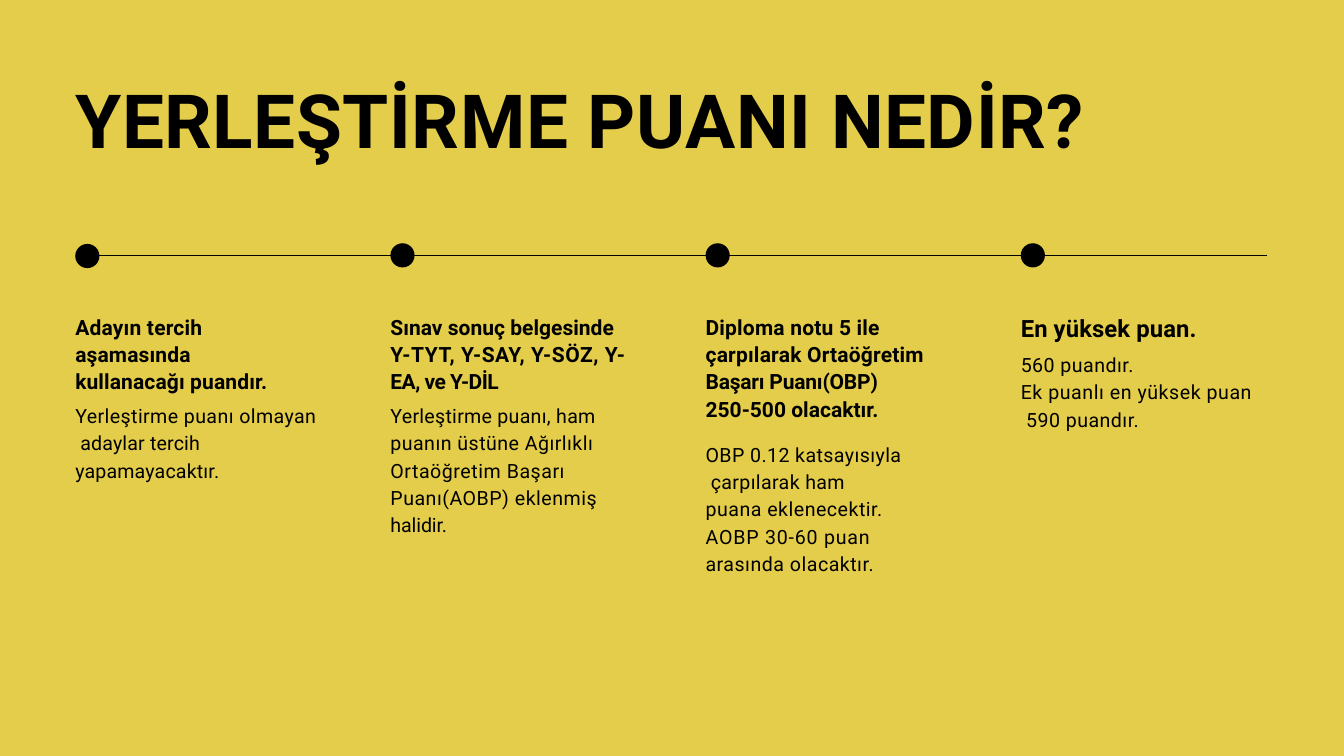
"""Build the slide on the placement score: a title and a four-step timeline."""
import math

import pptx
import pptx.dml.color
import pptx.enum.shapes
import pptx.util

Inches = pptx.util.Inches
Pt = pptx.util.Pt
COLORS = {"background": "E4CD4A", "ink": "000000"}
INK = pptx.dml.color.RGBColor.from_string(COLORS["ink"])
LEFT, PITCH, RADIUS, SIDES = 1.12, 4.69, 0.18, 24


def add_text(p, text, size=21, bold=False, spacing=0):
    r = p.add_run()
    r.text = text
    r.font.name = "Roboto"
    r.font.size = Pt(size)
    r.font.bold = bold
    r.font.color.rgb = INK
    r.font._element.set("spc", str(round(spacing * 100)))


def add_box(s, left, top, width, height):
    tf = s.shapes.add_textbox(Inches(left), Inches(top), Inches(width), Inches(height)).text_frame
    tf.word_wrap = True
    tf.margin_left = tf.margin_top = tf.margin_right = tf.margin_bottom = 0
    return tf


HEAD = {"size": 22.5, "bold": True}
BODY = {"size": 21, "bold": False}
BIG = {"size": 25.5, "bold": True}

# Each paragraph: format, line spacing, space before, lines with letter spacing
columns = [
    (4.65, 2.55, [
        (HEAD, 1.08, 0, [("Adayın tercih", 0.2), ("aşamasında", 0.1), ("kullanacağı puandır.", 0.1)]),
        (BODY, 1.16, 6.4, [("Yerleştirme puanı olmayan", 0.45), (" adaylar tercih", 0.2),
                           ("yapamayacaktır.", 0.2)]),
    ]),
    (4.65, 3.37, [
        (HEAD, 1.08, 0, [("Sınav sonuç belgesinde", 0), ("Y-TYT, Y-SAY, Y-SÖZ, Y-", 0.6),
                         ("EA, ve Y-DİL", -0.6)]),
        (BODY, 1.16, 6.4, [("Yerleştirme puanı, ham", 0.3), ("puanın üstüne Ağırlıklı", 0.5),
                           ("Ortaöğretim Başarı", 0.6), ("Puanı(AOBP) eklenmiş", 0.55),
                           ("halidir.", -0.1)]),
    ]),
    (4.65, 3.95, [
        (HEAD, 1.08, 0, [("Diploma notu 5 ile", 0.2), ("çarpılarak Ortaöğretim", 0.2),
                         ("Başarı Puanı(OBP)", -0.25)]),
        (HEAD, 1, 2.2, [("250-500 olacaktır.", 0)]),
        (BODY, 1.16, 18.9, [("OBP 0.12 katsayısıyla", 0.45), (" çarpılarak ham", 0.4),
                            ("puana eklenecektir.", 0.55)]),
        (BODY, 1.16, 0, [("AOBP 30-60 puan", 0.85), ("arasında olacaktır.", 0.55)]),
    ]),
    (4.67, 1.77, [
        (BIG, 1, 0, [("En yüksek puan.", 0.1)]),
        (BODY, 1, 11.5, [("560 puandır.", 0.5)]),
        (BODY, 1.16, 0, [("Ek puanlı en yüksek puan", 0.6), (" 590 puandır.", 0.5)]),
    ]),
]

prs = pptx.Presentation()
prs.slide_width, prs.slide_height = Inches(20), Inches(11.25)
s = prs.slides.add_slide(prs.slide_layouts[6])

sp = s.shapes.add_shape(pptx.enum.shapes.MSO_SHAPE.RECTANGLE, 0, 0, prs.slide_width, prs.slide_height)
sp.shadow.inherit = False
sp.fill.solid()
sp.fill.fore_color.rgb = pptx.dml.color.RGBColor.from_string(COLORS["background"])
sp.line.fill.background()

line = s.shapes.add_connector(pptx.enum.shapes.MSO_CONNECTOR.STRAIGHT,
                              Inches(1.31), Inches(3.8), Inches(18.86), Inches(3.8))
line.line.color.rgb = INK
line.line.width = Pt(1.5)
line._element.spPr.append(pptx.oxml.parse_xml(
    '<a:effectLst xmlns:a="http://schemas.openxmlformats.org/drawingml/2006/main"/>'))

dots = None
for i in range(len(columns)):
    x, y = LEFT + RADIUS + i * PITCH, 3.8 if i else 3.81
    points = [(Inches(x + RADIUS * math.cos(2 * math.pi * k / SIDES)),
               Inches(y + RADIUS * math.sin(2 * math.pi * k / SIDES))) for k in range(SIDES)]
    if dots is None:
        dots = s.shapes.build_freeform(*points[0])
    else:
        dots.move_to(*points[0])
    dots.add_line_segments(points[1:], close=True)
sp = dots.convert_to_shape()
sp.shadow.inherit = False
sp.fill.solid()
sp.fill.fore_color.rgb = INK
sp.line.fill.background()

tf = add_box(s, LEFT, 1.1, 15.48, 1.36)
add_text(tf.paragraphs[0], "YERLEŞTİRME PUANI NEDİR?", size=80, bold=True, spacing=0.65)

for i, (top, height, paragraphs) in enumerate(columns):
    tf = add_box(s, LEFT + i * PITCH, top, 3.68, height)
    for j, (style, line_spacing, before, lines) in enumerate(paragraphs):
        p = tf.add_paragraph() if j else tf.paragraphs[0]
        p.line_spacing = line_spacing
        p.space_before = Pt(before)
        for k, (text, spacing) in enumerate(lines):
            if k:
                p.add_line_break()
            add_text(p, text, spacing=spacing, **style)

prs.save("out.pptx")
